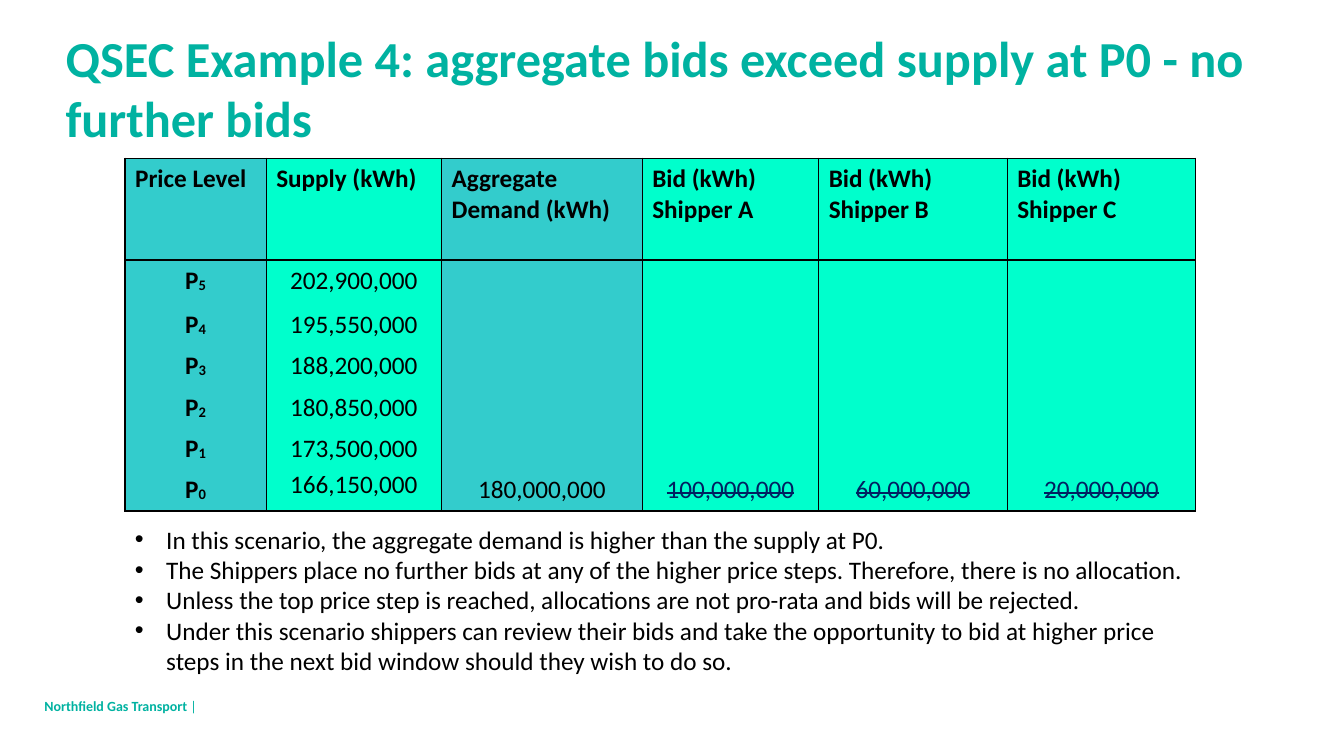
"""Build the QSEC Example 4 slide."""
from dataclasses import dataclass

import lxml.etree
import pptx
import pptx.dml.color
import pptx.enum.text
import pptx.oxml.ns
import pptx.util

Inches = pptx.util.Inches
ALIGN = pptx.enum.text.PP_ALIGN
ANCHOR = pptx.enum.text.MSO_ANCHOR

TITLE = "QSEC Example 4: aggregate bids exceed supply at P0 - no further bids"
HEADERS = ["Price Level", "Supply (kWh)", "Aggregate Demand (kWh)",
           "Bid (kWh) Shipper A", "Bid (kWh) Shipper B", "Bid (kWh) Shipper C"]
SUPPLY = [("5", "202,900,000"), ("4", "195,550,000"), ("3", "188,200,000"),
          ("2", "180,850,000"), ("1", "173,500,000"), ("0", "166,150,000")]
DEMAND = "180,000,000"
REJECTED_BIDS = ["100,000,000", "60,000,000", "20,000,000"]
BULLETS = [
    "In this scenario, the aggregate demand is higher than the supply at P0.",
    "The Shippers place no further bids at any of the higher price steps. "
    "Therefore, there is no allocation.",
    "Unless the top price step is reached, allocations are not pro-rata and bids will be rejected.",
    "Under this scenario shippers can review their bids and take the opportunity to bid "
    "at higher price steps in the next bid window should they wish to do so.",
]
FOOTER = ("Northfield Gas Transport ", "|")

COLUMN_WIDTHS = [1.4, 1.74, 1.99, 1.75, 1.87, 1.87, 0.23]
ROW_HEIGHTS = [1.01, 0.44] + [0.41] * 5
SHADED_COLUMNS = (0, 2)


@dataclass(frozen=True)
class Theme:
    """Hold the colours and type sizes."""
    font: str = "Calibri"
    accent: str = "00B2A1"
    text: str = "000000"
    rejected: str = "002060"
    shaded: str = "33CCCC"
    plain: str = "00FFCC"
    title_size: int = 36
    body_size: int = 18
    footer_size: int = 10


THEME = Theme()


def rgb(value):
    """Return a colour object."""
    return pptx.dml.color.RGBColor.from_string(value)


def format_runs(paragraph, size, color, bold=False):
    """Apply the type settings to every run."""
    for run in paragraph.runs:
        run.font.name = THEME.font
        run.font.size = pptx.util.Pt(size)
        run.font.bold = bold
        run.font.color.rgb = rgb(color)


def place(shape, left, top, width, height):
    """Set the position and size of a shape."""
    shape.left, shape.top = Inches(left), Inches(top)
    shape.width, shape.height = Inches(width), Inches(height)


def set_borders(cell, visible):
    """Draw the named cell edges and clear the others."""
    properties = cell._tc.get_or_add_tcPr()
    for edge in "LRTB":
        line = lxml.etree.SubElement(properties, pptx.oxml.ns.qn(f"a:ln{edge}"), w="12700")
        if edge in visible:
            fill = lxml.etree.SubElement(line, pptx.oxml.ns.qn("a:solidFill"))
            lxml.etree.SubElement(fill, pptx.oxml.ns.qn("a:srgbClr"), val=THEME.text)
        else:
            lxml.etree.SubElement(line, pptx.oxml.ns.qn("a:noFill"))


def style_cell(cell, row, column):
    """Set the borders and fill that belong to a grid position."""
    if column == len(HEADERS):
        set_borders(cell, "L")
        cell.fill.background()
        return
    edges = {0: "LRTB", 1: "LRT", len(SUPPLY): "LRB"}.get(row, "LR")
    set_borders(cell, edges)
    cell.fill.solid()
    cell.fill.fore_color.rgb = rgb(THEME.shaded if column in SHADED_COLUMNS else THEME.plain)


def write_cell(cell, text, color=THEME.text, bold=False, align=ALIGN.CENTER, subscript=""):
    """Write one table cell and return its runs."""
    paragraph = cell.text_frame.paragraphs[0]
    paragraph.text = text
    paragraph.alignment = align
    if subscript:
        run = paragraph.add_run()
        run.text = subscript
        run._r.get_or_add_rPr().set("baseline", "-4000")
    format_runs(paragraph, THEME.body_size, color, bold)
    return paragraph.runs


def add_bid_table(slide):
    """Add the price, supply and bid table."""
    frame = slide.shapes.add_table(len(ROW_HEIGHTS), len(COLUMN_WIDTHS), Inches(1.24), Inches(1.57),
                                   Inches(sum(COLUMN_WIDTHS)), Inches(sum(ROW_HEIGHTS)))
    table = frame.table
    table.first_row = table.horz_banding = False
    for column, width in zip(table.columns, COLUMN_WIDTHS):
        column.width = Inches(width)
    for row, height in zip(table.rows, ROW_HEIGHTS):
        row.height = Inches(height)
    for row in range(len(ROW_HEIGHTS)):
        for column in range(len(COLUMN_WIDTHS)):
            style_cell(table.cell(row, column), row, column)
    for column, header in enumerate(HEADERS):
        write_cell(table.cell(0, column), header, bold=True, align=ALIGN.LEFT)
    for row, (level, supply) in enumerate(SUPPLY, start=1):
        write_cell(table.cell(row, 0), "P", bold=True, subscript=level)
        write_cell(table.cell(row, 1), supply)
    base_row = len(SUPPLY)
    base_supply = table.cell(base_row, 1)
    base_supply.margin_left = base_supply.margin_right = 0
    base_supply.margin_top = base_supply.margin_bottom = 0
    write_cell(table.cell(base_row, 2), DEMAND)
    for column, bid in enumerate(REJECTED_BIDS, start=3):
        for run in write_cell(table.cell(base_row, column), bid, THEME.rejected):
            run._r.get_or_add_rPr().set("strike", "sngStrike")


def add_title(slide):
    """Fill and place the title."""
    title = slide.shapes.title
    place(title, 0.55, 0.16, 12.57, 1.41)
    title.text_frame.text = TITLE
    title.text_frame.word_wrap = True
    title.text_frame.auto_size = pptx.enum.text.MSO_AUTO_SIZE.NONE
    title.text_frame.vertical_anchor = ANCHOR.MIDDLE
    paragraph = title.text_frame.paragraphs[0]
    paragraph.alignment = ALIGN.LEFT
    format_runs(paragraph, THEME.title_size, THEME.accent, True)


def add_bullets(slide):
    """Add the explanatory bullet list."""
    box = slide.shapes.add_textbox(Inches(1.24), Inches(5.15), Inches(10.72), Inches(1.62))
    box.text_frame.word_wrap = True
    box.text_frame.text = "\n".join(BULLETS)
    indent = Inches(0.31)
    for paragraph in box.text_frame.paragraphs:
        properties = paragraph._p.get_or_add_pPr()
        properties.set("marL", str(indent))
        properties.set("indent", str(-indent))
        lxml.etree.SubElement(properties, pptx.oxml.ns.qn("a:buFont"), typeface="Arial")
        lxml.etree.SubElement(properties, pptx.oxml.ns.qn("a:buChar"), char="•")
        format_runs(paragraph, THEME.body_size, THEME.text)


def add_footer(slide):
    """Add the footer line."""
    box = slide.shapes.add_textbox(Inches(0.44), Inches(6.88), Inches(1.75), Inches(0.24))
    text_frame = box.text_frame
    text_frame.word_wrap = True
    text_frame.vertical_anchor = ANCHOR.MIDDLE
    text_frame.margin_left = text_frame.margin_right = 0
    text_frame.margin_top = text_frame.margin_bottom = 0
    name, divider = FOOTER
    paragraph = text_frame.paragraphs[0]
    paragraph.text = name
    paragraph.add_run().text = divider
    format_runs(paragraph, THEME.footer_size, THEME.accent, True)
    paragraph.runs[-1].font.bold = False


def main():
    """Assemble and save the presentation."""
    presentation = pptx.Presentation()
    presentation.slide_width, presentation.slide_height = Inches(13.33), Inches(7.5)
    slide = presentation.slides.add_slide(presentation.slide_layouts[5])
    add_title(slide)
    add_bid_table(slide)
    add_bullets(slide)
    add_footer(slide)
    presentation.save("out.pptx")


if __name__ == "__main__":
    main()
